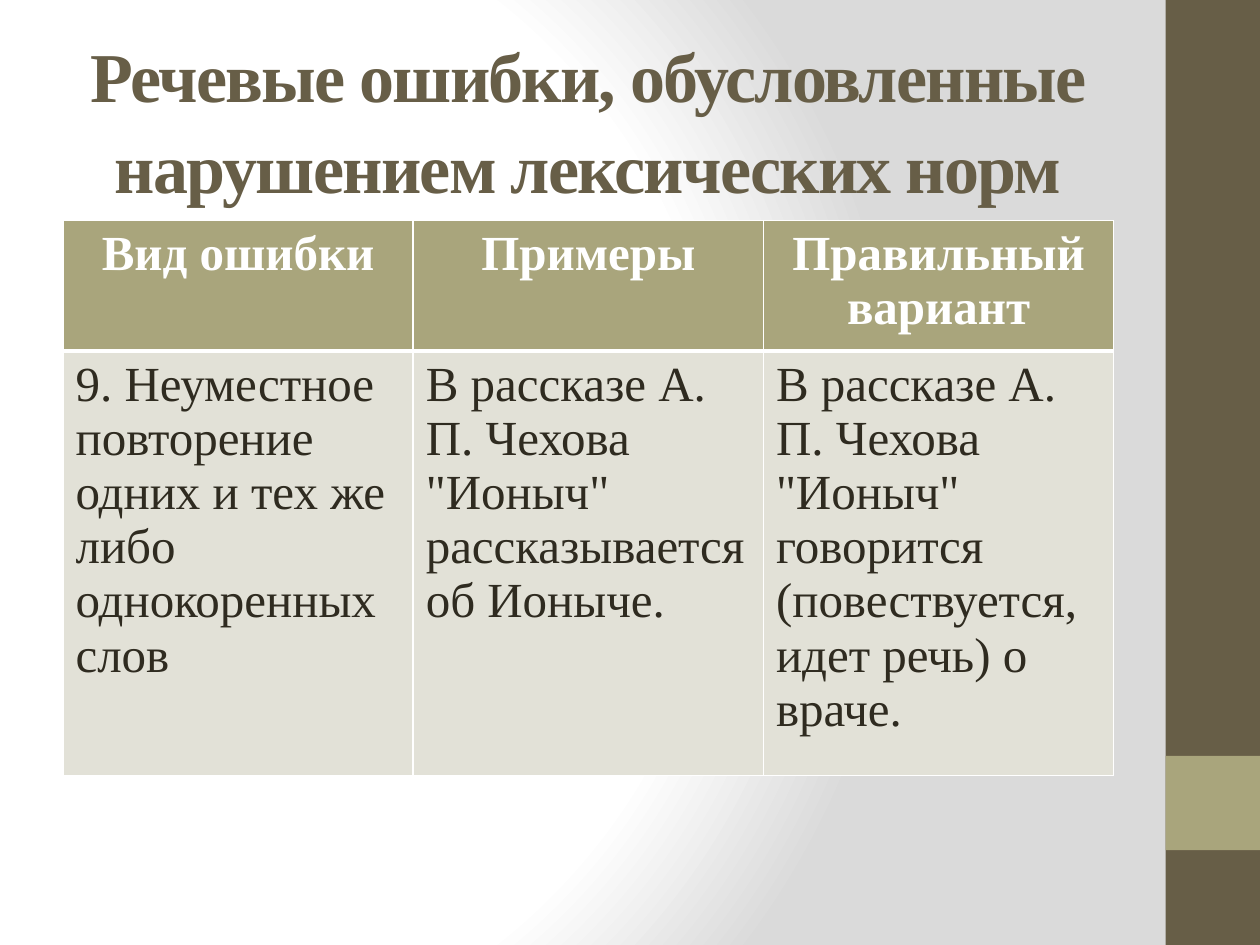
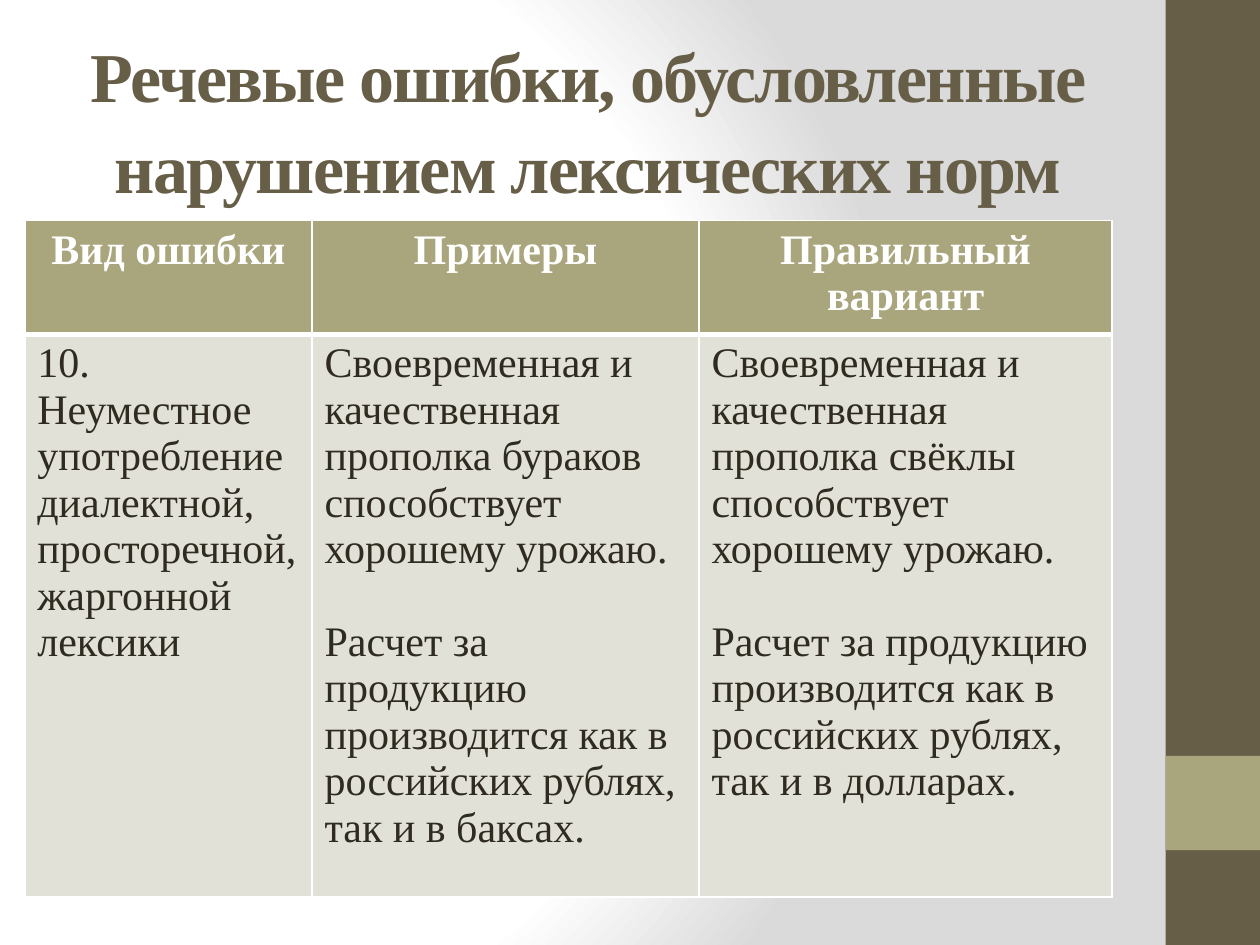
"""Build two slides on speech errors caused by breaking lexical norms."""
from lxml.etree import SubElement
from pptx import Presentation
from pptx.dml.color import RGBColor as Rgb
from pptx.enum.shapes import MSO_SHAPE as Shape
from pptx.enum.text import MSO_ANCHOR as Anchor, PP_ALIGN as Align
from pptx.oxml import parse_xml
from pptx.oxml.ns import nsdecls, qn
from pptx.util import Cm, Pt

COLORS = {
    "brown": "675E47",
    "olive": "A9A57C",
    "cell": "E2E1D7",
    "ink": "2F2B20",
    "white": "FFFFFF",
    "grey": "DADADA",
}
FONT = "Times New Roman"
TITLE = "Речевые ошибки, обусловленные нарушением лексических норм"
HEADINGS = ["Вид ошибки", "Примеры", "Правильный вариант"]
BANDS = [("brown", 0, 19.05), ("olive", 15.24, 1.9)]
TABLE_TOP = 4.45
ERRORS = [
    {
        "left": 1.27,
        "size": 28,
        "columns": [7.06, 7.06, 7.06],
        "rows": [2.44, 7.9],
        "texts": [
            ["9. Неуместное повторение одних и тех же либо однокоренных слов"],
            ['В рассказе А. П. Чехова "Ионыч" рассказывается об Ионыче.'],
            ['В рассказе А. П. Чехова "Ионыч" говорится '
             "(повествуется, идет речь) о враче."],
        ],
    },
    {
        "left": 0.5,
        "size": 24,
        "columns": [5.79, 7.8, 8.33],
        "rows": [2.13, 10.56],
        "texts": [
            ["10. Неуместное употребление диалектной, просторечной, "
             "жаргонной лексики"],
            ["Своевременная и качественная прополка бураков "
             "способствует хорошему урожаю.",
             "Расчет за продукцию производится как в российских рублях, "
             "так и в баксах."],
            ["Своевременная и качественная прополка свёклы "
             "способствует хорошему урожаю.",
             "Расчет за продукцию производится как в российских рублях, "
             "так и в долларах."],
        ],
    },
]


def write(frame, paragraphs, size, color, bold=False, align=Align.LEFT,
          line_spacing=None, tracking=0, gap=0):
    for number, words in enumerate(paragraphs):
        paragraph = frame.add_paragraph() if number else frame.paragraphs[0]
        paragraph.alignment = align
        paragraph.line_spacing = line_spacing
        if number:
            paragraph.space_before = Pt(gap)
        run = paragraph.add_run()
        run.text = words
        run.font.name = FONT
        run.font.size = Pt(size)
        run.font.bold = bold
        run.font.color.rgb = Rgb.from_string(COLORS[color])
        if tracking:
            run.font._element.set("spc", str(tracking * 100))


def style_cell(cell, color, top, bottom):
    cell.fill.solid()
    cell.fill.fore_color.rgb = Rgb.from_string(COLORS[color])
    props = cell._tc.get_or_add_tcPr()
    edges = [("L", 1), ("R", 1), ("T", top), ("B", bottom)]
    for place, (side, width) in enumerate(edges):
        edge = SubElement(props, qn(f"a:ln{side}"), w=str(Pt(width)))
        solid = SubElement(edge, qn("a:solidFill"))
        SubElement(solid, qn("a:srgbClr"), val=COLORS["white"])
        props.insert(place, edge)


deck = Presentation()
deck.slide_width, deck.slide_height = Cm(25.4), Cm(19.05)

master = deck.slide_master
master.background.fill.gradient()
backdrop = master._element.xpath(".//p:bg//a:gradFill")[0]
stops = "".join(
    f'<a:gs pos="{place * 1000}"><a:srgbClr val="{COLORS[color]}"/></a:gs>'
    for place, color in [(0, "white"), (75, "white"), (100, "grey")])
backdrop.getparent().replace(backdrop, parse_xml(
    f'<a:gradFill {nsdecls("a")} rotWithShape="1"><a:gsLst>{stops}</a:gsLst>'
    '<a:path path="circle"><a:fillToRect l="20000" t="50000" r="100000" '
    'b="50000"/></a:path></a:gradFill>'))

for error in ERRORS:
    slide = deck.slides.add_slide(deck.slide_layouts[6])

    for color, top, height in BANDS:
        band = slide.shapes.add_shape(
            Shape.RECTANGLE, Cm(23.5), Cm(top), Cm(1.9), Cm(height))
        band.shadow.inherit = False
        band.fill.solid()
        band.fill.fore_color.rgb = Rgb.from_string(COLORS[color])
        band.line.fill.background()

    title = slide.shapes.add_textbox(
        Cm(1.27), Cm(0.76), Cm(21.16), Cm(3.18)).text_frame
    title.word_wrap = True
    title.vertical_anchor = Anchor.MIDDLE
    write(title, [TITLE], 40, "brown", bold=True, align=Align.CENTER,
          line_spacing=1.08, tracking=-1)

    comparison = slide.shapes.add_table(
        2, 3, Cm(error["left"]), Cm(TABLE_TOP),
        Cm(sum(error["columns"])), Cm(sum(error["rows"]))).table
    comparison.horz_banding = False
    for row, height in zip(comparison.rows, error["rows"]):
        row.height = Cm(height)
    for index, width in enumerate(error["columns"]):
        comparison.columns[index].width = Cm(width)
        heading, body = comparison.cell(0, index), comparison.cell(1, index)
        style_cell(heading, "olive", top=1, bottom=3)
        style_cell(body, "cell", top=3, bottom=1)
        write(heading.text_frame, [HEADINGS[index]], error["size"], "white",
              bold=True, align=Align.CENTER)
        write(body.text_frame, error["texts"][index], error["size"], "ink",
              gap=26.5)

deck.save("out.pptx")
